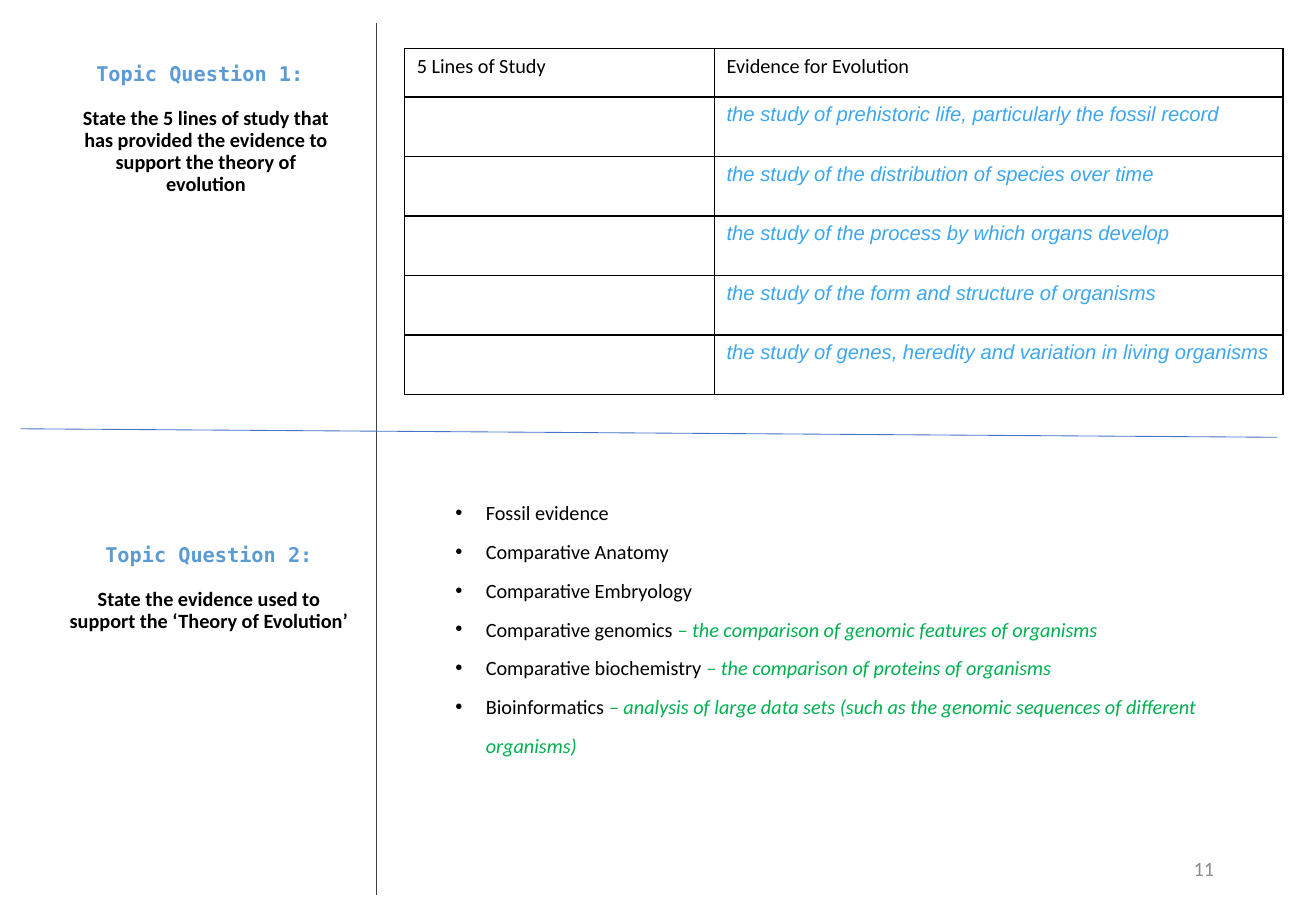
"""Build a study-notes slide on the evidence for evolution."""
import lxml.etree
import pptx
import pptx.dml.color
import pptx.enum.shapes
import pptx.enum.text
import pptx.oxml.ns
import pptx.util

Inches = pptx.util.Inches
Pt = pptx.util.Pt
RGBColor = pptx.dml.color.RGBColor
ALIGN = pptx.enum.text.PP_ALIGN
ANCHOR = pptx.enum.text.MSO_ANCHOR
qn = pptx.oxml.ns.qn

BLACK = RGBColor(0, 0, 0)
WHITE = RGBColor(255, 255, 255)
DARK_GREY = RGBColor(0x40, 0x40, 0x40)
GREY = RGBColor(0x8C, 0x8C, 0x8C)
RULE_BLUE = RGBColor(0x44, 0x72, 0xC4)
HEADING_BLUE = RGBColor(0x5B, 0x9B, 0xD5)
STUDY_BLUE = RGBColor(0x3C, 0xA7, 0xEF)
GREEN = RGBColor(0x00, 0xB0, 0x50)


def style(para, color, font="Calibri", bold=False, italic=False):
    for span in para.runs:
        span.font.name = font
        span.font.size = Pt(12)
        span.font.bold = bold
        span.font.italic = italic
        span.font.color.rgb = color


def add_box(left, top, width, height, anchor):
    box = page.shapes.add_textbox(Inches(left), Inches(top), Inches(width), Inches(height))
    box.text_frame.word_wrap = True
    box.text_frame.vertical_anchor = anchor
    return box.text_frame


deck = pptx.Presentation()
deck.slide_width = Inches(10.83)
deck.slide_height = Inches(7.5)
page = deck.slides.add_slide(deck.slide_layouts[6])

dividers = [
    (3.1, 0.19, 3.1, 7.37, DARK_GREY),
    (0.17, 3.53, 10.51, 3.6, RULE_BLUE),
]
for x1, y1, x2, y2, color in dividers:
    divider = page.shapes.add_connector(
        pptx.enum.shapes.MSO_CONNECTOR.STRAIGHT, Inches(x1), Inches(y1), Inches(x2), Inches(y2))
    divider.line.color.rgb = color
    divider.line.width = Pt(0.5)
    lxml.etree.SubElement(divider._element.spPr, qn("a:effectLst"))

questions = [
    (0.52, 0.47, 2.35, 1.2, "Topic Question 1: ",
     "State the 5 lines of study that has provided the evidence to support the theory of evolution"),
    (0.44, 4.4, 2.56, 0.9, "Topic Question 2:",
     "State the evidence used to support the ‘Theory of Evolution’"),
]
for left, top, width, height, heading, question in questions:
    frame = add_box(left, top, width, height, ANCHOR.MIDDLE)
    heading_para = frame.paragraphs[0]
    heading_para.text = heading
    style(heading_para, HEADING_BLUE, font="DejaVu Sans Mono", bold=True)
    question_para = frame.add_paragraph()
    question_para.text = question
    question_para.space_before = Pt(13)
    style(question_para, BLACK, bold=True)
    for para in frame.paragraphs:
        para.alignment = ALIGN.CENTER
        para.line_spacing = 0.9

studies = [
    "the study of prehistoric life, particularly the fossil record",
    "the study of the distribution of species over time",
    "the study of the process by which organs develop",
    "the study of the form and structure of organisms",
    "the study of genes, heredity and variation in living organisms",
]
rows = [("5 Lines of Study", "Evidence for Evolution")] + [("", study) for study in studies]
table = page.shapes.add_table(
    len(rows), 2, Inches(3.33), Inches(0.4), Inches(7.23), Inches(2.85)).table
table.columns[0].width = Inches(2.55)
table.columns[1].width = Inches(4.68)
for row_index, texts in enumerate(rows):
    is_header = row_index == 0
    table.rows[row_index].height = Inches(0.4 if is_header else 0.49)
    for column_index, text in enumerate(texts):
        cell = table.cell(row_index, column_index)
        cell.text = text
        para = cell.text_frame.paragraphs[0]
        if is_header:
            style(para, BLACK)
        else:
            style(para, STUDY_BLUE, font="Arial", italic=True)
        properties = cell._tc.get_or_add_tcPr()
        for side in ("a:lnL", "a:lnR", "a:lnT", "a:lnB"):
            border = lxml.etree.SubElement(properties, qn(side), w=str(Pt(1)))
            fill = lxml.etree.SubElement(border, qn("a:solidFill"))
            lxml.etree.SubElement(fill, qn("a:srgbClr"), val=str(BLACK))
        cell.fill.solid()
        cell.fill.fore_color.rgb = WHITE

evidence = [
    ("Fossil evidence", ""),
    ("Comparative Anatomy", ""),
    ("Comparative Embryology", ""),
    ("Comparative genomics ", "– the comparison of genomic features of organisms"),
    ("Comparative biochemistry ", "– the comparison of proteins of organisms"),
    ("Bioinformatics ",
     "– analysis of large data sets (such as the genomic sequences of different organisms)"),
]
frame = add_box(3.65, 3.95, 6.74, 2.65, ANCHOR.TOP)
for index, (name, note) in enumerate(evidence):
    para = frame.add_paragraph() if index else frame.paragraphs[0]
    para.text = name
    para.line_spacing = 1.6
    style(para, BLACK)
    if note:
        span = para.add_run()
        span.text = note
        span.font.name = "Calibri"
        span.font.size = Pt(12)
        span.font.italic = True
        span.font.color.rgb = GREEN
    properties = para._p.get_or_add_pPr()
    properties.set("marL", str(Inches(0.25)))
    properties.set("indent", str(Inches(-0.25)))
    lxml.etree.SubElement(properties, qn("a:buFont"), typeface="Arial")
    lxml.etree.SubElement(properties, qn("a:buChar"), char="•")

number_para = add_box(7.65, 6.95, 2.44, 0.4, ANCHOR.MIDDLE).paragraphs[0]
number_para.text = "11"
number_para.alignment = ALIGN.RIGHT
style(number_para, GREY)

deck.save("out.pptx")
